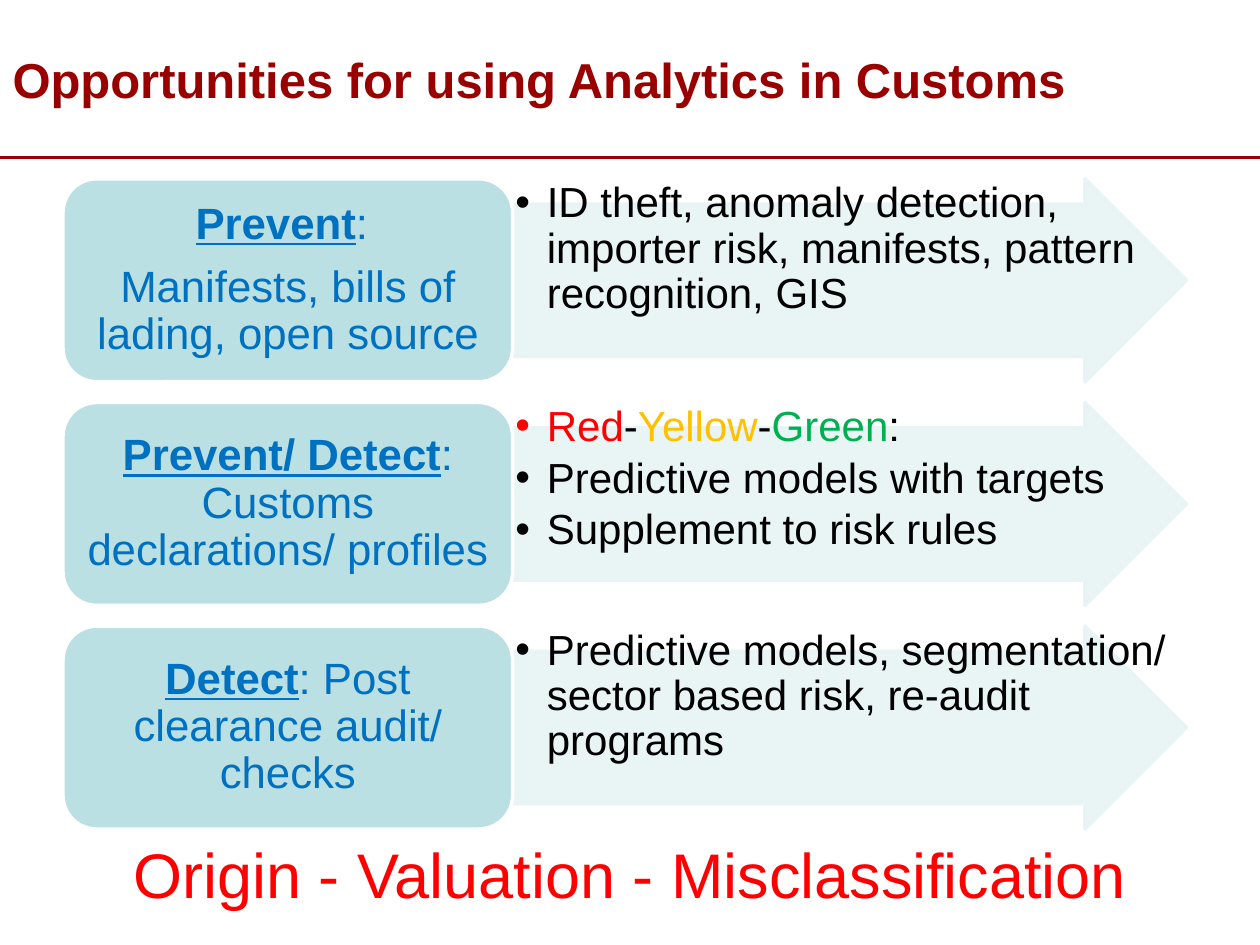
from dataclasses import dataclass

from lxml import etree
from pptx import Presentation
from pptx.dml.color import RGBColor
from pptx.enum.shapes import MSO_CONNECTOR, MSO_SHAPE
from pptx.enum.text import MSO_ANCHOR, MSO_AUTO_SIZE, PP_ALIGN
from pptx.oxml.ns import qn
from pptx.util import Pt

STRAIGHT = MSO_CONNECTOR.STRAIGHT
ARROW, ROUNDED = MSO_SHAPE.RIGHT_ARROW, MSO_SHAPE.ROUNDED_RECTANGLE
TOP, MIDDLE, BOTTOM = MSO_ANCHOR.TOP, MSO_ANCHOR.MIDDLE, MSO_ANCHOR.BOTTOM
NO_FIT, GROW = MSO_AUTO_SIZE.NONE, MSO_AUTO_SIZE.SHAPE_TO_FIT_TEXT
LEFT, CENTER = PP_ALIGN.LEFT, PP_ALIGN.CENTER


@dataclass(frozen=True)
class Theme:
    font: str = "Arial"
    maroon: str = "990000"
    red: str = "FF0000"
    yellow: str = "FFC000"
    green: str = "00B050"
    black: str = "000000"
    blue: str = "0070C0"
    teal: str = "BBE0E3"
    pale: str = "E7F3F4"
    white: str = "FFFFFF"
    title_size: int = 28
    stage_size: int = 25
    list_size: int = 24
    summary_size: int = 36


theme = Theme()


def write(paragraph, text, size, color, bold=False, underline=False):
    run = paragraph.add_run()
    run.text = text
    run.font.name = theme.font
    run.font.size = Pt(size)
    run.font.bold = bold
    run.font.underline = underline
    run.font.color.rgb = RGBColor.from_string(color)


def add_panel(kind, left, top, width, height, fill, line):
    panel = slide.shapes.add_shape(kind, Pt(left), Pt(top), Pt(width), Pt(height))
    panel.shadow.inherit = False
    panel.fill.solid()
    panel.fill.fore_color.rgb = RGBColor.from_string(fill)
    panel.line.color.rgb = RGBColor.from_string(line)
    panel.line.width = Pt(2)
    return panel


stages = [
    (
        [[("Prevent", True), (": ", False)],
         [("Manifests, bills of lading, open source", False)]],
        [[("ID theft, anomaly detection, importer risk, manifests, "
           "pattern recognition, GIS", theme.black)]],
    ),
    (
        [[("Prevent/ Detect", True), (": Customs declarations/ profiles", False)]],
        [[("Red", theme.red), ("-", theme.black), ("Yellow", theme.yellow),
          ("-", theme.black), ("Green", theme.green), (":", theme.black)],
         [("Predictive models with targets", theme.black)],
         [("Supplement to risk rules", theme.black)]],
    ),
    (
        [[("Detect", True), (": Post clearance audit/ checks", False)]],
        [[("Predictive models, segmentation/ sector based risk, "
           "re-audit programs", theme.black)]],
    ),
]

deck = Presentation()
deck.slide_width, deck.slide_height = Pt(720), Pt(540)
slide = deck.slides.add_slide(deck.slide_layouts[4])
heading, *lists, spare = slide.placeholders
spare.element.getparent().remove(spare.element)

rule = slide.shapes.add_connector(STRAIGHT, Pt(0), Pt(90), Pt(720), Pt(90))
rule.line.color.rgb = RGBColor.from_string(theme.maroon)
rule.line.width = Pt(2.25)
etree.SubElement(rule.element.spPr, qn("a:effectLst"))

heading.left, heading.top, heading.width, heading.height = Pt(0), Pt(24), Pt(630), Pt(41.5)
heading.text_frame.vertical_anchor = BOTTOM
heading.text_frame.auto_size = NO_FIT
title_line = heading.text_frame.paragraphs[0]
title_line.alignment = LEFT
write(title_line, "Opportunities for using Analytics in Customs",
      size=theme.title_size, color=theme.maroon, bold=True)

summary = slide.shapes.add_textbox(Pt(42), Pt(474), Pt(636), Pt(51)).text_frame
summary.word_wrap = True
summary.auto_size = GROW
summary.paragraphs[0].alignment = CENTER
write(summary.paragraphs[0], "Origin - Valuation - Misclassification",
      size=theme.summary_size, color=theme.red)

stage_left, stage_width = 36, 257
arrow_left, arrow_width = stage_left + stage_width, 385
first_top, row_height, row_pitch = 102.2, 116, 127.8

for row, ((stage_lines, methods), method_list) in enumerate(zip(stages, lists)):
    top = first_top + row * row_pitch

    arrow = add_panel(ARROW, arrow_left, top, arrow_width, row_height, theme.pale, theme.pale)
    arrow.adjustments[0], arrow.adjustments[1] = 0.75, 0.5
    for tint in arrow.element.spPr.iter(qn("a:srgbClr")):
        etree.SubElement(tint, qn("a:alpha"), val="90000")

    slide.shapes._spTree.append(method_list.element)
    method_list.left, method_list.top = Pt(arrow_left), Pt(top)
    method_list.width, method_list.height = Pt(arrow_width), Pt(row_height)
    frame = method_list.text_frame
    frame.vertical_anchor = TOP
    frame.auto_size = NO_FIT
    frame.margin_left = frame.margin_right = frame.margin_top = frame.margin_bottom = Pt(1.5)
    for index, pieces in enumerate(methods):
        item = frame.add_paragraph() if index else frame.paragraphs[0]
        item.level = 1
        item.alignment = LEFT
        item.line_spacing = 0.9
        item.space_before, item.space_after = Pt(0), Pt(3.6)
        properties = item._p.get_or_add_pPr()
        properties.set("marL", str(Pt(18)))
        properties.set("indent", str(-Pt(18)))
        etree.SubElement(properties, qn("a:buFont"), typeface=theme.font)
        etree.SubElement(properties, qn("a:buChar"), char="•")
        for text, color in pieces:
            write(item, text, size=theme.list_size, color=color)

    stage = add_panel(ROUNDED, stage_left, top, stage_width, row_height, theme.teal, theme.white)
    frame = stage.text_frame
    frame.word_wrap = True
    frame.vertical_anchor = MIDDLE
    for index, pieces in enumerate(stage_lines):
        line = frame.add_paragraph() if index else frame.paragraphs[0]
        line.alignment = CENTER
        line.line_spacing = 0.9
        line.space_after = Pt(8.75)
        for text, strong in pieces:
            write(line, text, size=theme.stage_size, color=theme.blue,
                  bold=strong, underline=strong)

deck.save("out.pptx")
